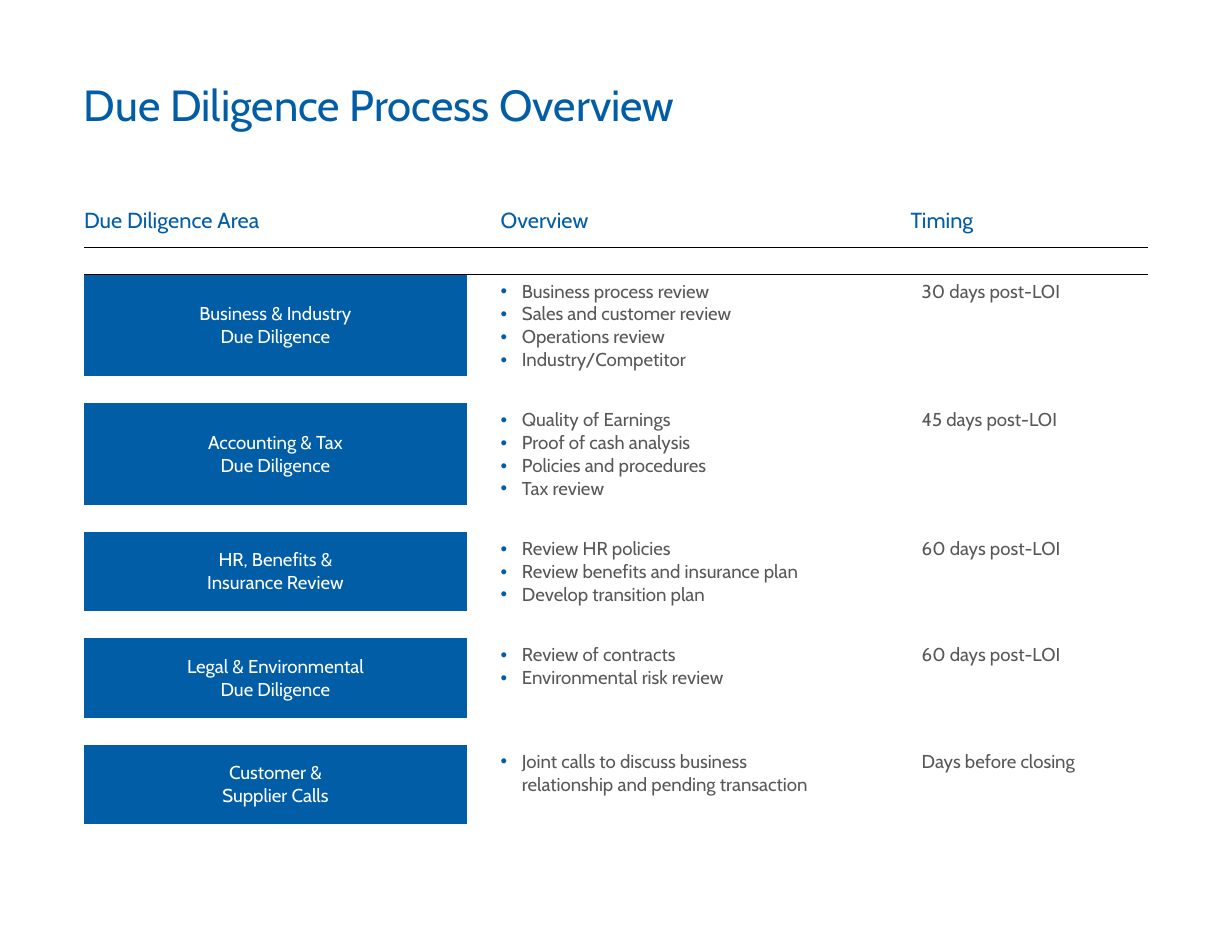
import copy

import lxml.etree
import pptx
import pptx.dml.color
import pptx.enum.text
import pptx.oxml.ns
import pptx.util

BLUE = pptx.dml.color.RGBColor(0x00, 0x5D, 0xA6)
GRAY = pptx.dml.color.RGBColor(0x58, 0x58, 0x58)
WHITE = pptx.dml.color.RGBColor(0xFF, 0xFF, 0xFF)
BLACK = pptx.dml.color.RGBColor(0x00, 0x00, 0x00)

FONT = "Cabin"
NO_STYLE = "{2D5ABB26-0587-4C30-8999-92F81FD0307C}"
GRID_COLUMNS, GRID_ROWS = 44, 34
CENTER = pptx.enum.text.PP_ALIGN.CENTER
MIDDLE = pptx.enum.text.MSO_ANCHOR.MIDDLE
TOP = pptx.enum.text.MSO_ANCHOR.TOP

HEADINGS = ["Due Diligence Area", "Overview", "Timing"]
COLUMN_WIDTHS = [13.68, 15.84, 8.48]
HEADING_HEIGHT, GAP_HEIGHT = 1.64, 0.96
TALL, SHORT = 3.64, 2.84
AREAS = [
    (TALL, ["Business & Industry", "Due Diligence"],
     ["Business process review", "Sales and customer review",
      "Operations review", "Industry/Competitor"], "30 days post-LOI"),
    (TALL, ["Accounting & Tax", "Due Diligence"],
     ["Quality of Earnings", "Proof of cash analysis",
      "Policies and procedures", "Tax review"], "45 days post-LOI"),
    (SHORT, ["HR, Benefits &\nInsurance Review"],
     ["Review HR policies", "Review benefits and insurance plan",
      "Develop transition plan"], "60 days post-LOI"),
    (SHORT, ["Legal & Environmental", "Due Diligence"],
     ["Review of contracts", "Environmental risk review"], "60 days post-LOI"),
    (SHORT, ["Customer &\nSupplier Calls"],
     ["Joint calls to discuss business\nrelationship and pending transaction"],
     "Days before closing"),
]


def add_node(parent, tag, **attributes):
    return lxml.etree.SubElement(parent, pptx.oxml.ns.qn(tag), **attributes)


def write_text(frame, lines, size=12, color=GRAY, align=None, spacing=None, indent=None):
    for index, line in enumerate(lines):
        paragraph = frame.paragraphs[0] if index == 0 else frame.add_paragraph()
        paragraph.text = line
        paragraph.alignment = align
        if spacing:
            paragraph.line_spacing = spacing
        for run in paragraph.runs:
            run.font.name = FONT
            run.font.size = pptx.util.Pt(size)
            run.font.color.rgb = color
        for line_break in paragraph._p.findall(pptx.oxml.ns.qn("a:br")):
            line_break.insert(0, copy.deepcopy(paragraph.runs[0]._r.rPr))
        if indent:
            properties = paragraph._p.get_or_add_pPr()
            properties.set("marL", str(indent))
            properties.set("indent", str(-indent))
            add_node(add_node(properties, "a:buClr"), "a:srgbClr", val=str(BLUE))
            add_node(properties, "a:buFont", typeface="Arial")
            add_node(properties, "a:buChar", char="•")


class Page:
    def __init__(self, presentation):
        self.column = presentation.slide_width / GRID_COLUMNS
        self.row = presentation.slide_height / GRID_ROWS
        self.slide = presentation.slides.add_slide(presentation.slide_layouts[6])

    def across(self, columns):
        return round(columns * self.column)

    def down(self, rows):
        return round(rows * self.row)

    def place(self, left, top, width, height):
        return self.across(left), self.down(top), self.across(width), self.down(height)

    def title(self, text, *box):
        frame = self.slide.shapes.add_textbox(*self.place(*box)).text_frame
        frame.word_wrap = True
        frame.vertical_anchor = MIDDLE
        frame.margin_left = frame.margin_right = frame.margin_top = frame.margin_bottom = 0
        write_text(frame, [text], size=28, color=BLUE, spacing=0.9)

    def table(self, left, top, widths, heights):
        box = self.place(left, top, sum(widths), sum(heights))
        table = self.slide.shapes.add_table(len(heights), len(widths), *box).table
        table.first_row = table.horz_banding = False
        table._tbl.tblPr.find(pptx.oxml.ns.qn("a:tableStyleId")).text = NO_STYLE
        for column, width in zip(table.columns, widths):
            column.width = self.across(width)
        for row, height in zip(table.rows, heights):
            row.height = self.down(height)
        return table

    def cell(self, cell, lines, fill=None, inset=0.4, anchor=TOP, **style):
        cell.margin_left = self.across(inset)
        cell.vertical_anchor = anchor
        if fill is None:
            cell.fill.background()
        else:
            cell.fill.solid()
            cell.fill.fore_color.rgb = fill
        write_text(cell.text_frame, lines, **style)

    def spacer(self, cell):
        cell.margin_top = cell.margin_bottom = 0
        cell.fill.background()
        add_node(cell.text_frame.paragraphs[0]._p, "a:endParaRPr", sz="600")

    def rule(self, cell, edge):
        properties = cell._tc.get_or_add_tcPr()
        line = add_node(properties, edge, w=str(pptx.util.Pt(0.5)))
        add_node(add_node(line, "a:solidFill"), "a:srgbClr", val=str(BLACK))
        properties.insert(0, line)


def main():
    presentation = pptx.Presentation()
    presentation.slide_width = pptx.util.Inches(11)
    presentation.slide_height = pptx.util.Inches(8.5)
    page = Page(presentation)
    page.title("Due Diligence Process Overview", 3, 3, 38, 1.68)

    heights = [HEADING_HEIGHT]
    for height, *_ in AREAS:
        heights += [GAP_HEIGHT, height]
    schedule = page.table(3, 7.2, COLUMN_WIDTHS, heights)

    for column, heading in enumerate(HEADINGS):
        inset = 1.2 if heading == "Overview" else 0
        page.cell(schedule.cell(0, column), [heading], inset=inset, size=14, color=BLUE)
        for gap in range(1, len(heights), 2):
            page.spacer(schedule.cell(gap, column))
        page.rule(schedule.cell(0, column), "a:lnB")
        page.rule(schedule.cell(1, column), "a:lnT")

    for index, (_, area, overview, timing) in enumerate(AREAS):
        row = 2 * index + 2
        page.cell(schedule.cell(row, 0), area, fill=BLUE, anchor=MIDDLE,
                  color=WHITE, align=CENTER)
        page.cell(schedule.cell(row, 1), overview, inset=1.2, indent=page.across(0.76))
        page.cell(schedule.cell(row, 2), [timing])

    presentation.save("out.pptx")


if __name__ == "__main__":
    main()
